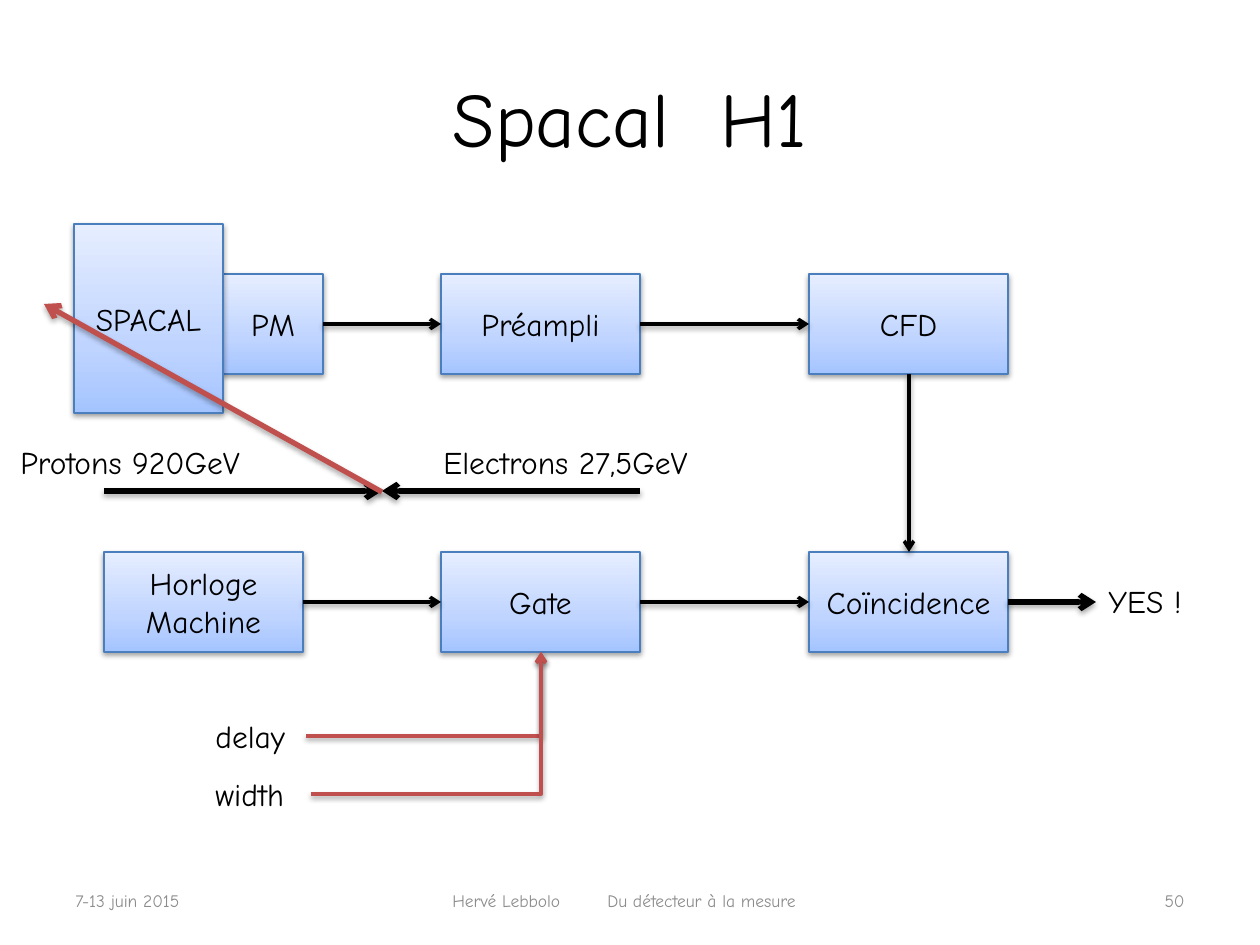
from dataclasses import dataclass

from lxml import etree
from pptx import Presentation
from pptx import util as u
from pptx.dml.color import RGBColor
from pptx.enum import shapes, text
from pptx.oxml import ns

PX = u.Inches(1) / 126
FONT = "Comic Neue"
BLACK = RGBColor(0x00, 0x00, 0x00)
GREY = RGBColor(0x8C, 0x8C, 0x8C)
RED = RGBColor(0xC0, 0x50, 0x4D)
EDGE = RGBColor(0x4B, 0x7E, 0xBC)
GRADIENT = (
    (0, RGBColor(0xA4, 0xC4, 0xFF)),
    (35, RGBColor(0xBF, 0xD4, 0xFF)),
    (100, RGBColor(0xE6, 0xEE, 0xFF)),
)
LEFT, CENTER, RIGHT = text.PP_ALIGN.LEFT, text.PP_ALIGN.CENTER, text.PP_ALIGN.RIGHT


@dataclass(frozen=True)
class Block:
    label: str
    x: int
    y: int
    w: int = 199
    h: int = 100


@dataclass(frozen=True)
class Label:
    label: str
    x: int
    y: int
    w: int
    h: int = 51
    size: int = 18
    color: RGBColor = BLACK
    align: text.PP_ALIGN = LEFT
    anchor: text.MSO_ANCHOR = text.MSO_ANCHOR.TOP
    wrap: bool = False


@dataclass(frozen=True)
class Arrow:
    x1: int
    y1: int
    x2: int
    y2: int
    width: int = 2
    color: RGBColor = BLACK
    bent: bool = False


def px(*values: int) -> list[int]:
    return [u.Emu(round(v * PX)) for v in values]


def child(parent, tag: str, **attrs):
    return etree.SubElement(parent, ns.qn(tag), {k: str(v) for k, v in attrs.items()})


def add_shadow(effects, distance: int = 20000, alpha: int = 38000) -> None:
    shadow = child(effects, "a:outerShdw", blurRad=40000, dist=distance,
                   dir=5400000, rotWithShape=0)
    child(child(shadow, "a:srgbClr", val=BLACK), "a:alpha", val=alpha)


def write(tf, content: str, *, size: int = 18, color: RGBColor = BLACK,
          align=CENTER, anchor=text.MSO_ANCHOR.MIDDLE, wrap: bool = True) -> None:
    tf.word_wrap = wrap
    tf.vertical_anchor = anchor
    for i, line in enumerate(content.split("\n")):
        p = tf.paragraphs[0] if i == 0 else tf.add_paragraph()
        p.alignment = align
        r = p.add_run()
        r.text = line
        r.font.name = FONT
        r.font.size = u.Pt(size)
        r.font.color.rgb = color


def add_block(s, b: Block) -> None:
    sp = s.shapes.add_shape(shapes.MSO_SHAPE.RECTANGLE, *px(b.x, b.y, b.w, b.h))
    sp.fill.gradient()
    sp.fill.gradient_angle = 90
    stops = sp._element.spPr.find(".//" + ns.qn("a:gsLst"))
    for stop in list(stops):
        stops.remove(stop)
    for position, color in GRADIENT:
        child(child(stops, "a:gs", pos=position * 1000), "a:srgbClr", val=color)
    sp.line.color.rgb = EDGE
    sp.line.width = u.Pt(0.75)
    sp.shadow.inherit = False
    add_shadow(sp._element.spPr.find(ns.qn("a:effectLst")))
    write(sp.text_frame, b.label)


def add_label(s, t: Label) -> None:
    sp = s.shapes.add_textbox(*px(t.x, t.y, t.w, t.h))
    write(sp.text_frame, t.label, size=t.size, color=t.color,
          align=t.align, anchor=t.anchor, wrap=t.wrap)


def add_arrow(s, a: Arrow) -> None:
    kind = shapes.MSO_CONNECTOR.ELBOW if a.bent else shapes.MSO_CONNECTOR.STRAIGHT
    sp = s.shapes.add_connector(kind, *px(a.x1, a.y1, a.x2, a.y2))
    sp.line.color.rgb = a.color
    sp.line.width = u.Pt(a.width)
    spPr = sp._element.spPr
    if a.bent:
        spPr.find(ns.qn("a:prstGeom")).set("prst", "bentConnector2")
    child(spPr.find(ns.qn("a:ln")), "a:tailEnd", type="arrow")
    effects = child(spPr, "a:effectLst")
    if a.width == 3:
        add_shadow(effects, 23000, 35000)
    else:
        add_shadow(effects)


COL1, COL2, COL3 = 104, 441, 809
ROW1, ROW2 = 274, 552
MID1, MID2 = ROW1 + 50, ROW2 + 50
END2, END3 = COL2 + 199, COL3 + 199
BEAM_X, BEAM_Y = 382, 491
GATE_X, GATE_BOTTOM = COL2 + 100, ROW2 + 100

FRAME = dict(anchor=text.MSO_ANCHOR.MIDDLE, wrap=True)
FOOTER = dict(y=876, h=50, size=10, color=GREY, **FRAME)

LABELS = [
    Label("Spacal  H1", 63, 38, 1134, 158, 44, align=CENTER, **FRAME),
    Label("7-13 juin 2015", x=63, w=190, **FOOTER),
    Label("Hervé Lebbolo", x=440, w=150, **FOOTER),
    Label("Du détecteur à la mesure", x=595, w=250, **FOOTER),
    Label("50", x=1047, w=150, align=RIGHT, **FOOTER),
    Label("delay", 203, 711, 103),
    Label("width", 203, 769, 108),
    Label("YES !", 1096, 576, 105),
    Label("Protons 920GeV", 8, 437, 266),
    Label("Electrons 27,5GeV", 431, 437, 304),
]
BLOCKS = [
    Block("PM", 223, ROW1, w=100),
    Block("Préampli", COL2, ROW1),
    Block("CFD", COL3, ROW1),
    Block("Horloge\nMachine", COL1, ROW2),
    Block("Gate", COL2, ROW2),
    Block("Coïncidence", COL3, ROW2),
    Block("SPACAL", 74, 224, 149, 189),
]
ARROWS = [
    Arrow(323, MID1, COL2, MID1),
    Arrow(END2, MID1, COL3, MID1),
    Arrow(COL1 + 199, MID2, COL2, MID2),
    Arrow(END2, MID2, COL3, MID2),
    Arrow(306, 736, GATE_X, GATE_BOTTOM, color=RED, bent=True),
    Arrow(311, 794, GATE_X, GATE_BOTTOM, color=RED, bent=True),
    Arrow(END3, MID2, 1096, MID2, width=3),
    Arrow(COL3 + 100, ROW1 + 100, COL3 + 100, ROW2),
    Arrow(COL1, BEAM_Y, BEAM_X, BEAM_Y, width=3),
    Arrow(END2, BEAM_Y, BEAM_X, BEAM_Y, width=3),
    Arrow(BEAM_X, BEAM_Y + 1, 44, 304, width=3, color=RED),
]


def main() -> None:
    prs = Presentation()
    prs.slide_width, prs.slide_height = px(1260, 945)
    s = prs.slides.add_slide(prs.slide_layouts[6])
    for label in LABELS:
        add_label(s, label)
    for block in BLOCKS:
        add_block(s, block)
    for arrow in ARROWS:
        add_arrow(s, arrow)
    prs.save("out.pptx")


if __name__ == "__main__":
    main()
